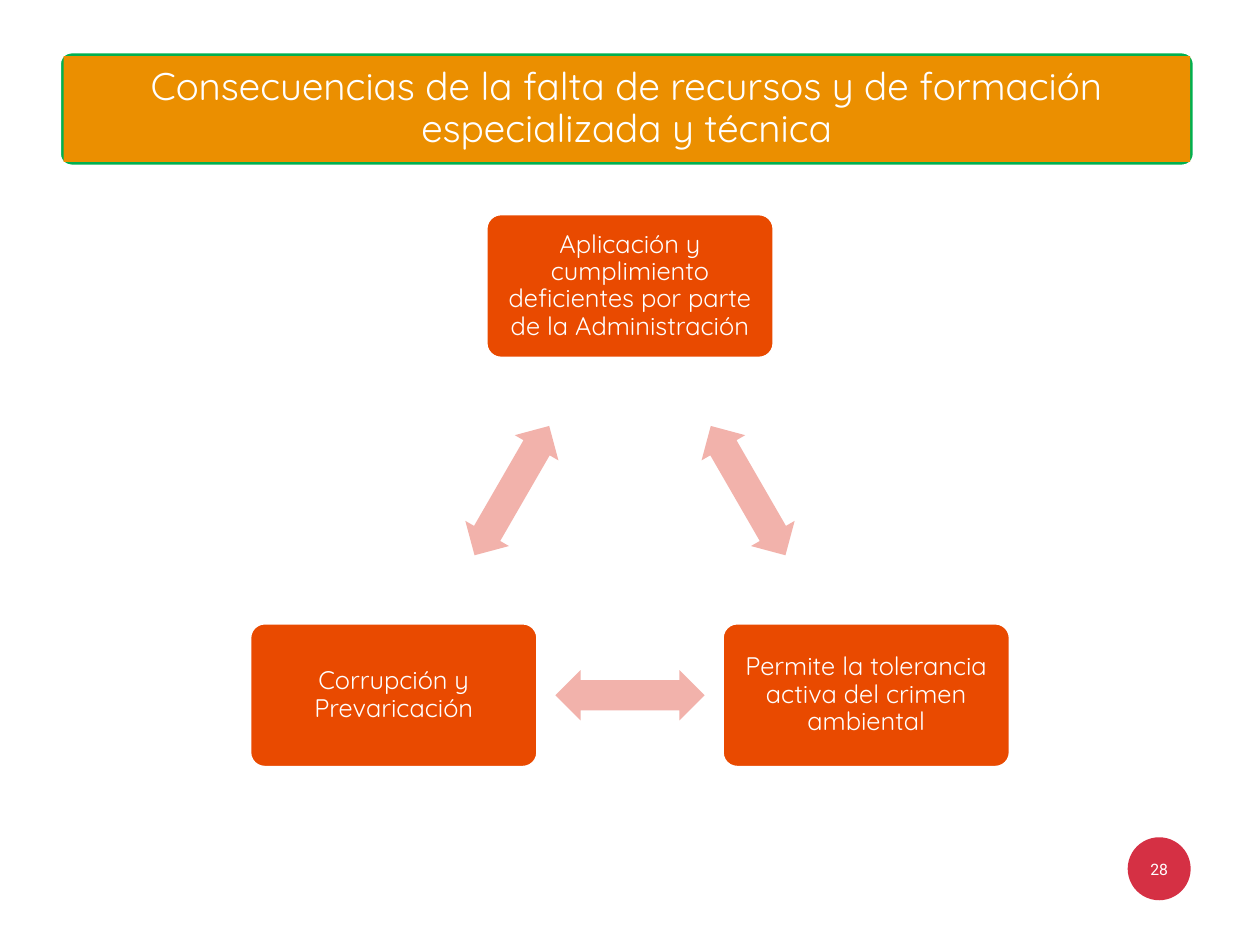
"""Build a slide with a triangular cycle of three consequences."""
from math import cos, radians, sin

from pptx import Presentation
from pptx.dml.color import RGBColor
from pptx.enum.shapes import MSO_SHAPE
from pptx.enum.text import MSO_ANCHOR, MSO_AUTO_SIZE, PP_ALIGN
from pptx.util import Inches, Pt

ROUND, ARROW, OVAL = MSO_SHAPE.ROUNDED_RECTANGLE, MSO_SHAPE.LEFT_RIGHT_ARROW, MSO_SHAPE.OVAL
MIDDLE, CENTER, NO_FIT = MSO_ANCHOR.MIDDLE, PP_ALIGN.CENTER, MSO_AUTO_SIZE.NONE

TITLE = "Consecuencias de la falta de recursos y de formación especializada y técnica"
NODES = [
    "Aplicación y cumplimiento deficientes por parte de la Administración",
    "Permite la tolerancia activa del crimen ambiental",
    "Corrupción y Prevaricación",
]
PAGE = "28"

THEME = {
    "node": "E94A00", "arrow": "F2B2AB", "frame": "00B050", "title": "EB8F00",
    "badge": "D53044", "light": "FFFFFF",
    "head": {"name": "Quicksand", "size": Pt(44)},
    "body": {"name": "Quicksand", "size": Pt(29)},
    "page": {"name": "Roboto", "size": Pt(18)},
}

W, H = 20, 15
CX, CY, RADIUS = W / 2, 8.87, 4.33
NODE_SIZE, ARROW_SIZE = (4.55, 2.27), (2.37, 0.8)
TITLE_CENTER, FRAME_SIZE, TITLE_SIZE = (9.95, 1.73), (17.99, 1.79), (17.88, 1.68)
BADGE_CENTER, BADGE_SIZE = (18.4, 13.79), (1, 1)
STEP = 360 / len(NODES)


def color(key):
    return RGBColor.from_string(THEME[key])


def box(center, size):
    (x, y), (w, h) = center, size
    return [Inches(v) for v in (x - w / 2, y - h / 2, w, h)]


def on_circle(angle, radius):
    return CX + radius * sin(radians(angle)), CY - radius * cos(radians(angle))


def add_shape(slide, kind, center, size, fill, adjust=(), outline=False):
    sp = slide.shapes.add_shape(kind, *box(center, size))
    sp.shadow.inherit = False
    sp.fill.solid()
    sp.fill.fore_color.rgb = color(fill)
    for i, value in enumerate(adjust):
        sp.adjustments[i] = value
    if outline:
        sp.line.color.rgb = color("light")
        sp.line.width = Pt(2)
    else:
        sp.line.fill.background()
    return sp


def write(sp, text, style, inset, spacing=1.0):
    tf = sp.text_frame
    frame = {"word_wrap": True, "auto_size": NO_FIT, "vertical_anchor": MIDDLE}
    frame.update({f"margin_{side}": Inches(inset) for side in ("left", "top", "right", "bottom")})
    for name, value in frame.items():
        setattr(tf, name, value)
    p = tf.paragraphs[0]
    p.alignment, p.line_spacing = CENTER, spacing
    r = p.add_run()
    r.text = text
    for name, value in THEME[style].items():
        setattr(r.font, name, value)
    r.font.color.rgb = color("light")


def add_title(slide):
    add_shape(slide, ROUND, TITLE_CENTER, FRAME_SIZE, "frame", [0.1], True)
    title = slide.shapes.title
    title.left, title.top, title.width, title.height = box(TITLE_CENTER, TITLE_SIZE)
    title.fill.solid()
    title.fill.fore_color.rgb = color("title")
    write(title, TITLE, "head", 0.18, 0.9)
    title.element.getparent().append(title.element)


def add_cycle(slide):
    for i, text in enumerate(NODES):
        node = add_shape(slide, ROUND, on_circle(i * STEP, RADIUS), NODE_SIZE, "node", [0.1], True)
        write(node, text, "body", 0.12, 0.9)
        angle = (i + 0.5) * STEP
        middle = on_circle(angle, RADIUS * cos(radians(STEP / 2)))
        arrow = add_shape(slide, ARROW, middle, ARROW_SIZE, "arrow", [0.6, 0.5])
        arrow.rotation = angle


def main():
    prs = Presentation()
    prs.slide_width, prs.slide_height = Inches(W), Inches(H)
    slide = prs.slides.add_slide(prs.slide_layouts.get_by_name("Title Only"))
    badge = add_shape(slide, OVAL, BADGE_CENTER, BADGE_SIZE, "badge")
    write(badge, PAGE, "page", 0)
    add_cycle(slide)
    add_title(slide)
    prs.save("out.pptx")


if __name__ == "__main__":
    main()
